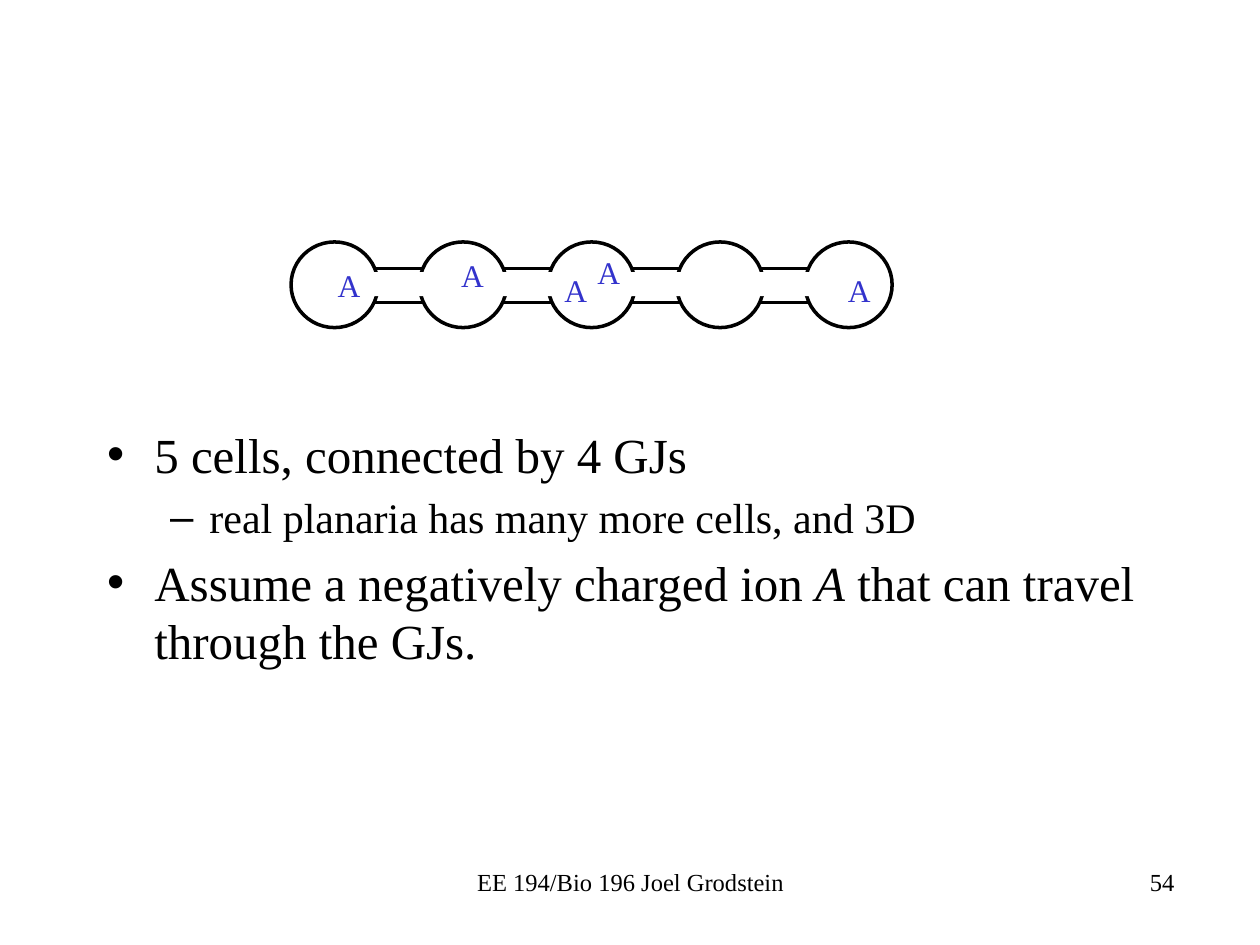
from pptx import Presentation
from pptx.dml.color import RGBColor
from pptx.enum.shapes import MSO_SHAPE as Kind
from pptx.enum.text import MSO_ANCHOR as Anchor, MSO_AUTO_SIZE as Auto, PP_ALIGN as Align
from pptx.util import Inches, Pt

BLACK = RGBColor(0x00, 0x00, 0x00)
WHITE = RGBColor(0xFF, 0xFF, 0xFF)
BLUE = RGBColor(0x33, 0x33, 0xCC)
FONT = "Times New Roman"


def write(para, text, size=14, color=BLACK, italic=False, align=None):
    run = para.add_run()
    run.text = text
    run.font.name = FONT
    run.font.size = Pt(size)
    run.font.color.rgb = color
    run.font.italic = italic
    if align is not None:
        para.alignment = align


def draw(kind, left, top, width, height, edge=True):
    shape = slide.shapes.add_shape(
        kind, Inches(left), Inches(top), Inches(width), Inches(height))
    shape.shadow.inherit = False
    shape.fill.solid()
    shape.fill.fore_color.rgb = WHITE
    if edge:
        shape.line.color.rgb = BLACK
        shape.line.width = Pt(2)
    else:
        shape.line.fill.background()


prs = Presentation()
prs.slide_width = Inches(10)
prs.slide_height = Inches(7.5)
slide = prs.slides.add_slide(prs.slide_layouts[1])
title = slide.shapes.title
title.element.getparent().remove(title.element)

body = slide.placeholders[1]
body.left, body.top = Inches(0.75), Inches(3.32)
body.width, body.height = Inches(8.5), Inches(2.56)
frame = body.text_frame
frame.auto_size = Auto.NONE
points = [
    (0, 28, ["5 cells, connected by 4 GJs"]),
    (1, 24, ["real planaria has many more cells, and 3D"]),
    (0, 28, ["Assume a negatively charged ion ", "A", " that can travel through the GJs."]),
]
for i, (level, size, parts) in enumerate(points):
    para = frame.add_paragraph() if i else frame.paragraphs[0]
    para.level = level
    for part in parts:
        write(para, part, size=size, italic=part == "A")

draw(Kind.RECTANGLE, 2.79, 2.13, 3.98, 0.27)
for i in range(5):
    draw(Kind.OVAL, 2.31 + 1.02 * i, 1.92, 0.69, 0.68)
draw(Kind.RECTANGLE, 2.75, 2.16, 4.05, 0.19, edge=False)

ions = [(2.68, 2.11), (3.66, 2.03), (4.48, 2.15), (4.74, 2.01), (6.73, 2.15)]
for left, top in ions:
    box = slide.shapes.add_textbox(Inches(left), Inches(top), Inches(0.18), Inches(0.3))
    frame = box.text_frame
    frame.margin_left = frame.margin_right = frame.margin_top = frame.margin_bottom = 0
    frame.word_wrap = False
    frame.auto_size = Auto.SHAPE_TO_FIT_TEXT
    frame.vertical_anchor = Anchor.MIDDLE
    write(frame.paragraphs[0], "A", size=18, color=BLUE)

notes = [
    (3.42, "EE 194/Bio 196 Joel Grodstein", Align.CENTER),
    (6.25, "54", Align.RIGHT),
]
for left, text, align in notes:
    box = slide.shapes.add_textbox(Inches(left), Inches(6.83), Inches(3.17), Inches(0.5))
    box.text_frame.word_wrap = True
    write(box.text_frame.paragraphs[0], text, align=align)

prs.save("out.pptx")
